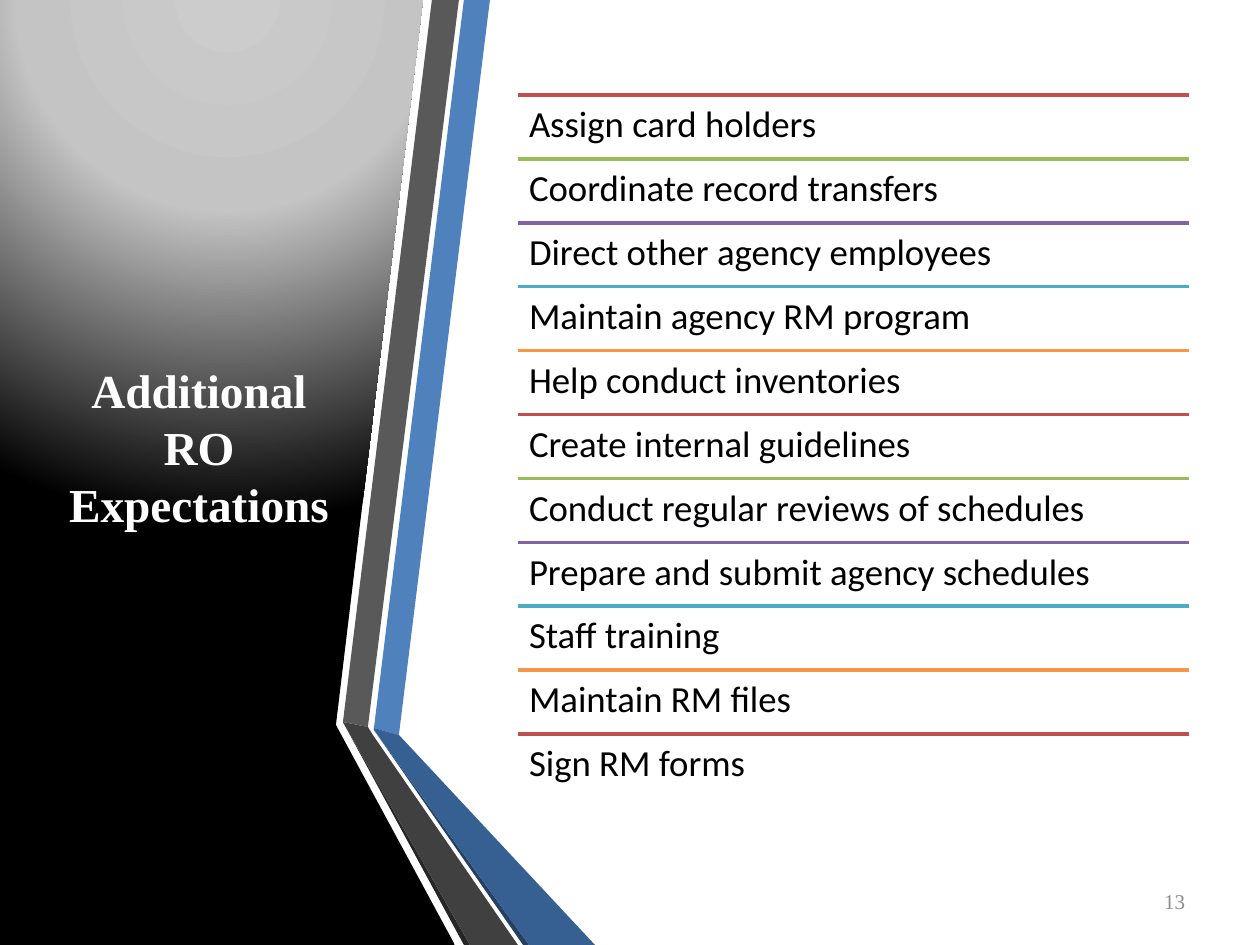
"""Build the slide listing additional RO expectations beside a folded ribbon panel."""
from lxml import etree
from pptx import Presentation
from pptx.dml.color import RGBColor
from pptx.enum.shapes import MSO_CONNECTOR
from pptx.enum.text import MSO_ANCHOR, PP_ALIGN
from pptx.oxml import parse_xml
from pptx.oxml.ns import nsdecls, qn
from pptx.util import Pt

STRAIGHT = MSO_CONNECTOR.STRAIGHT
TOP, MIDDLE = MSO_ANCHOR.TOP, MSO_ANCHOR.MIDDLE
LEFT, CENTER, RIGHT = PP_ALIGN.LEFT, PP_ALIGN.CENTER, PP_ALIGN.RIGHT
EMU_PER_PX = 914400 / 126

TITLE = "Additional RO Expectations"
PAGE_NUMBER = "13"
EXPECTATIONS = [
    "Assign card holders",
    "Coordinate record transfers",
    "Direct other agency employees",
    "Maintain agency RM program",
    "Help conduct inventories",
    "Create internal guidelines",
    "Conduct regular reviews of schedules",
    "Prepare and submit agency schedules",
    "Staff training",
    "Maintain RM files",
    "Sign RM forms",
]

THEME = {
    "rules": ["C0504D", "9BBB59", "8064A2", "4BACC6", "F79646"],
    "rule_width": 2,
    "glow": [(0, "CCCCCC"), (40, "C4C4C4"), (100, "000000")],
    "title": {"name": "Times New Roman", "size": 27, "bold": True, "color": "FFFFFF"},
    "item": {"name": "Calibri", "size": 21, "bold": False, "color": "000000"},
    "number": {"name": "Times New Roman", "size": 12, "bold": False, "color": "8C8C8C"},
}

SLIDE_SIZE = (1260, 945)
TITLE_BOX = (55, 95, 288, 703)
NUMBER_BOX = (903, 876, 294, 50)
LIST_BOX = (518, 95, 671, 703)
ITEM_INSET = 11

PANEL = [(333, 0), (423, 0), (336, 725), (455, 945), (0, 945), (0, 0)]
RIBBONS = [
    ("4F81BD", [(374, 728), (399, 735), (490, 0), (464, 0)]),
    ("595959", [(459, 0), (432, 0), (343, 722), (368, 727)]),
    ("262626", [(343, 722), (464, 945), (470, 945)]),
    ("254061", [(374, 730), (523, 945), (529, 945)]),
    ("376092", [(374, 730), (529, 945), (595, 945), (399, 735), (374, 728)]),
    ("404040", [(518, 945), (373, 735), (368, 727), (343, 722), (470, 945)]),
]


def px(value):
    return round(value * EMU_PER_PX)


def add_outline(slide, points):
    builder = slide.shapes.build_freeform(*points[0], scale=EMU_PER_PX)
    builder.add_line_segments(points[1:], close=True)
    outline = builder.convert_to_shape()
    outline.shadow.inherit = False
    outline.line.fill.background()
    return outline


def add_panel(slide):
    panel = add_outline(slide, PANEL)
    panel.fill.background()
    stops = "".join(
        f'<a:gs pos="{position * 1000}"><a:srgbClr val="{color}"/></a:gs>'
        for position, color in THEME["glow"]
    )
    glow = parse_xml(
        f'<a:gradFill {nsdecls("a")} rotWithShape="1"><a:gsLst>{stops}</a:gsLst>'
        '<a:path path="circle"><a:fillToRect l="50000" t="-80000" r="50000" b="180000"/>'
        "</a:path></a:gradFill>"
    )
    properties = panel._element.spPr
    properties.replace(properties.find(qn("a:noFill")), glow)


def add_ribbon(slide, color, points):
    ribbon = add_outline(slide, points)
    ribbon.fill.solid()
    ribbon.fill.fore_color.rgb = RGBColor.from_string(color)


def add_text(slide, text, box, style, anchor, align, inset, spacing=1.0):
    frame = slide.shapes.add_textbox(*map(px, box)).text_frame
    frame_format = {"word_wrap": True, "vertical_anchor": anchor}
    frame_format.update(
        {f"margin_{side}": px(inset) for side in ("left", "top", "right", "bottom")}
    )
    for attribute, value in frame_format.items():
        setattr(frame, attribute, value)
    paragraph = frame.paragraphs[0]
    paragraph.alignment = align
    paragraph.line_spacing = spacing
    run = paragraph.add_run()
    run.text = text
    font_format = {"name": style["name"], "size": Pt(style["size"]), "bold": style["bold"]}
    for attribute, value in font_format.items():
        setattr(run.font, attribute, value)
    run.font.color.rgb = RGBColor.from_string(style["color"])


def add_rule(slide, left, right, y, color):
    rule = slide.shapes.add_connector(STRAIGHT, px(left), px(y), px(right), px(y))
    rule.line.color.rgb = RGBColor.from_string(color)
    rule.line.width = Pt(THEME["rule_width"])
    etree.SubElement(rule._element.spPr, qn("a:effectLst"))


def add_expectations(slide):
    left, top, width, height = LIST_BOX
    row_height = height / len(EXPECTATIONS)
    colors = THEME["rules"]
    for index, expectation in enumerate(EXPECTATIONS):
        y = top + index * row_height
        add_rule(slide, left, left + width, y, colors[index % len(colors)])
        add_text(slide, expectation, (left, y, width, row_height),
                 THEME["item"], TOP, LEFT, ITEM_INSET, 0.9)


def main():
    presentation = Presentation()
    presentation.slide_width, presentation.slide_height = map(px, SLIDE_SIZE)
    slide = presentation.slides.add_slide(presentation.slide_layouts[6])
    add_panel(slide)
    for color, points in RIBBONS:
        add_ribbon(slide, color, points)
    add_text(slide, TITLE, TITLE_BOX, THEME["title"], MIDDLE, CENTER, 6)
    add_expectations(slide)
    add_text(slide, PAGE_NUMBER, NUMBER_BOX, THEME["number"], MIDDLE, RIGHT, 12)
    presentation.save("out.pptx")


if __name__ == "__main__":
    main()
